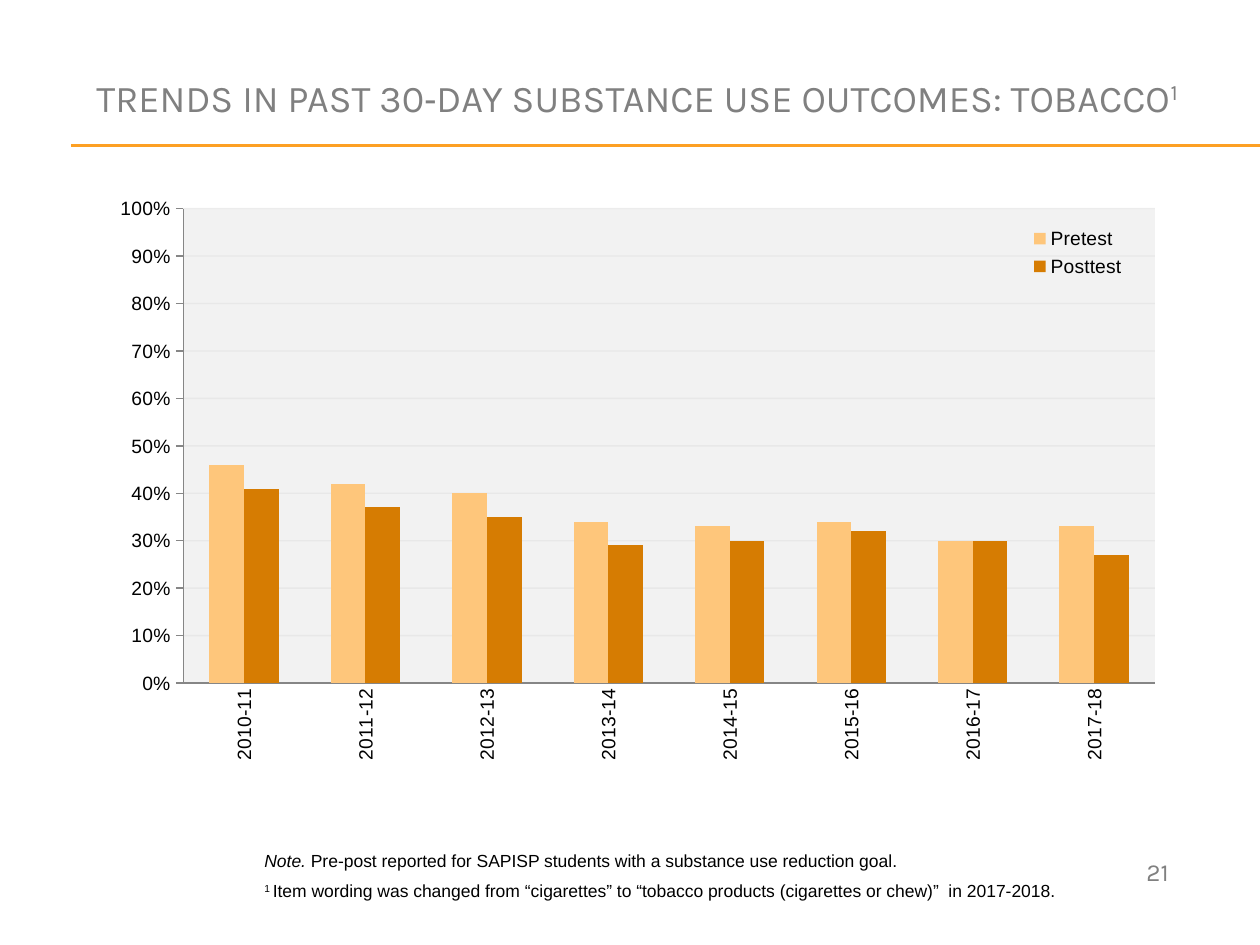
from lxml.etree import SubElement
from pptx import Presentation
from pptx.chart.data import CategoryChartData
from pptx.dml.color import RGBColor
from pptx.enum.chart import XL_CHART_TYPE, XL_LEGEND_POSITION, XL_TICK_MARK
from pptx.enum.shapes import MSO_CONNECTOR
from pptx.enum.text import MSO_ANCHOR
from pptx.oxml import parse_xml
from pptx.oxml.ns import nsdecls, qn
from pptx.util import Emu, Pt

COLORS = {
    "rule": "FDA023", "heading": "808080", "text": "000000", "plot": "F2F2F2",
    "grid": "D9D9D9", "axis": "868686", "pretest": "FEC67B", "posttest": "D67C02",
}
HEADING, BODY = "Karla", "Arial"
YEARS = ["2010-11", "2011-12", "2012-13", "2013-14",
         "2014-15", "2015-16", "2016-17", "2017-18"]
RATES = {
    "Pretest": [0.46, 0.42, 0.40, 0.34, 0.33, 0.34, 0.30, 0.33],
    "Posttest": [0.41, 0.37, 0.35, 0.29, 0.30, 0.32, 0.30, 0.27],
}


def px(n):
    return Emu(round(n * 914400 / 126))


def rgb(name):
    return RGBColor.from_string(COLORS[name])


def set_font(font, size, face, color):
    font.size, font.name = Pt(size), face
    font.color.rgb = rgb(color)


def add_rule(s, y):
    line = s.shapes.add_connector(MSO_CONNECTOR.STRAIGHT, px(71), px(y), px(1260), px(y))
    line.line.color.rgb = rgb("rule")
    line.line.width = Pt(0.75)
    SubElement(line._element.spPr, qn("a:effectLst"))


def add_text(s, box, paragraphs, size, face, color, wrap=True, anchor=MSO_ANCHOR.TOP):
    """Each paragraph is a list of (text, style); style is "", "italic" or "super"."""
    tf = s.shapes.add_textbox(*map(px, box)).text_frame
    tf.word_wrap, tf.vertical_anchor = wrap, anchor
    for i, runs in enumerate(paragraphs):
        p = tf.add_paragraph() if i else tf.paragraphs[0]
        if i:
            p.space_before = Pt(size / 2)
        for text, style in runs:
            r = p.add_run()
            r.text = text
            set_font(r.font, size, face, color)
            if style == "italic":
                r.font.italic = True
            elif style == "super":
                r.font._element.set("baseline", "30000")


def set_layout(parent, index, x, y, w, h, inner=False):
    """Place a chart part by fractions of the chart area."""
    for old in parent.findall(qn("c:layout")):
        parent.remove(old)
    layout = parse_xml(f"<c:layout {nsdecls('c')}><c:manualLayout/></c:layout>")
    values = {"xMode": "edge", "yMode": "edge", "x": x, "y": y, "w": w, "h": h}
    if inner:
        values = {"layoutTarget": "inner", **values}
    for tag, value in values.items():
        SubElement(layout[0], qn(f"c:{tag}")).set("val", str(value))
    parent.insert(index, layout)


def style_axes(chart):
    for axis in (chart.category_axis, chart.value_axis):
        set_font(axis.tick_labels.font, 11, BODY, "text")
        axis.format.line.color.rgb = rgb("axis")
        axis.format.line.width = Pt(0.75)

    years = chart.category_axis
    years.major_tick_mark = XL_TICK_MARK.NONE
    body = years._element.find(qn("c:txPr")).find(qn("a:bodyPr"))
    body.set("rot", "-5400000")
    body.set("vert", "horz")

    rates = chart.value_axis
    rates.minimum_scale, rates.maximum_scale, rates.major_unit = 0, 1, 0.1
    rates.major_tick_mark = XL_TICK_MARK.OUTSIDE
    rates.tick_labels.number_format = "0%"
    rates.tick_labels.number_format_is_linked = False
    rates.has_major_gridlines = True
    grid = rates.major_gridlines.format.line
    grid.color.rgb = rgb("grid")
    grid.width = Pt(0.75)
    for color in rates.major_gridlines._xAx.find(qn("c:majorGridlines")).iter(qn("a:srgbClr")):
        SubElement(color, qn("a:alpha")).set("val", "40000")


def add_rate_chart(s, box):
    data = CategoryChartData(number_format="0%")
    data.categories = YEARS
    for name, values in RATES.items():
        data.add_series(name, values)
    chart = s.shapes.add_chart(XL_CHART_TYPE.COLUMN_CLUSTERED, *map(px, box), data).chart
    chart.has_title = False
    set_font(chart.font, 18, HEADING, "text")
    style_axes(chart)

    # Bars
    plot = chart.plots[0]
    plot.gap_width, plot.overlap, plot.vary_by_categories = 150, 0, False
    for series in plot.series:
        series.format.fill.solid()
        series.format.fill.fore_color.rgb = rgb(series.name.lower())

    # Plot area
    area = chart._chartSpace.chart.plotArea
    set_layout(area, 0, 0.106, 0.06, 0.857, 0.701, inner=True)
    area.append(parse_xml(
        f"<c:spPr {nsdecls('c', 'a')}><a:solidFill><a:srgbClr val=\"{COLORS['plot']}\"/>"
        "</a:solidFill><a:ln><a:noFill/></a:ln></c:spPr>"))

    # Legend
    chart.has_legend = True
    legend = chart.legend
    legend.position = XL_LEGEND_POSITION.RIGHT
    legend.include_in_layout = True
    set_font(legend.font, 11, BODY, "text")
    set_layout(legend._element, 1, 0.85, 0.08, 0.09, 0.09)


def main():
    prs = Presentation()
    prs.slide_width, prs.slide_height = px(1260), px(945)
    s = prs.slides.add_slide(prs.slide_layouts[6])

    # Heading with its double rule
    for y in (145, 146):
        add_rule(s, y)
    title = [("TRENDS IN PAST 30‑DAY SUBSTANCE USE OUTCOMES: TOBACCO", ""), ("1", "super")]
    add_text(s, (84, 42, 1166, 110), [title], 21.6, HEADING, "heading",
             anchor=MSO_ANCHOR.MIDDLE)

    add_rate_chart(s, (63, 168, 1134, 677))

    # Notes and page number
    notes = [
        [("Note.", "italic"),
         (" Pre‑post reported for SAPISP students with a substance use reduction goal.", "")],
        [("1 ", "super"),
         ("Item wording was changed from “cigarettes” to “tobacco products "
          "(cigarettes or chew)”  in 2017-2018.", "")],
    ]
    add_text(s, (252, 844, 839, 66), notes, 10, BODY, "text")
    add_text(s, (1134, 851, 50, 43), [[("21", "")]], 14, HEADING, "heading", wrap=False)

    prs.save("out.pptx")


if __name__ == "__main__":
    main()
